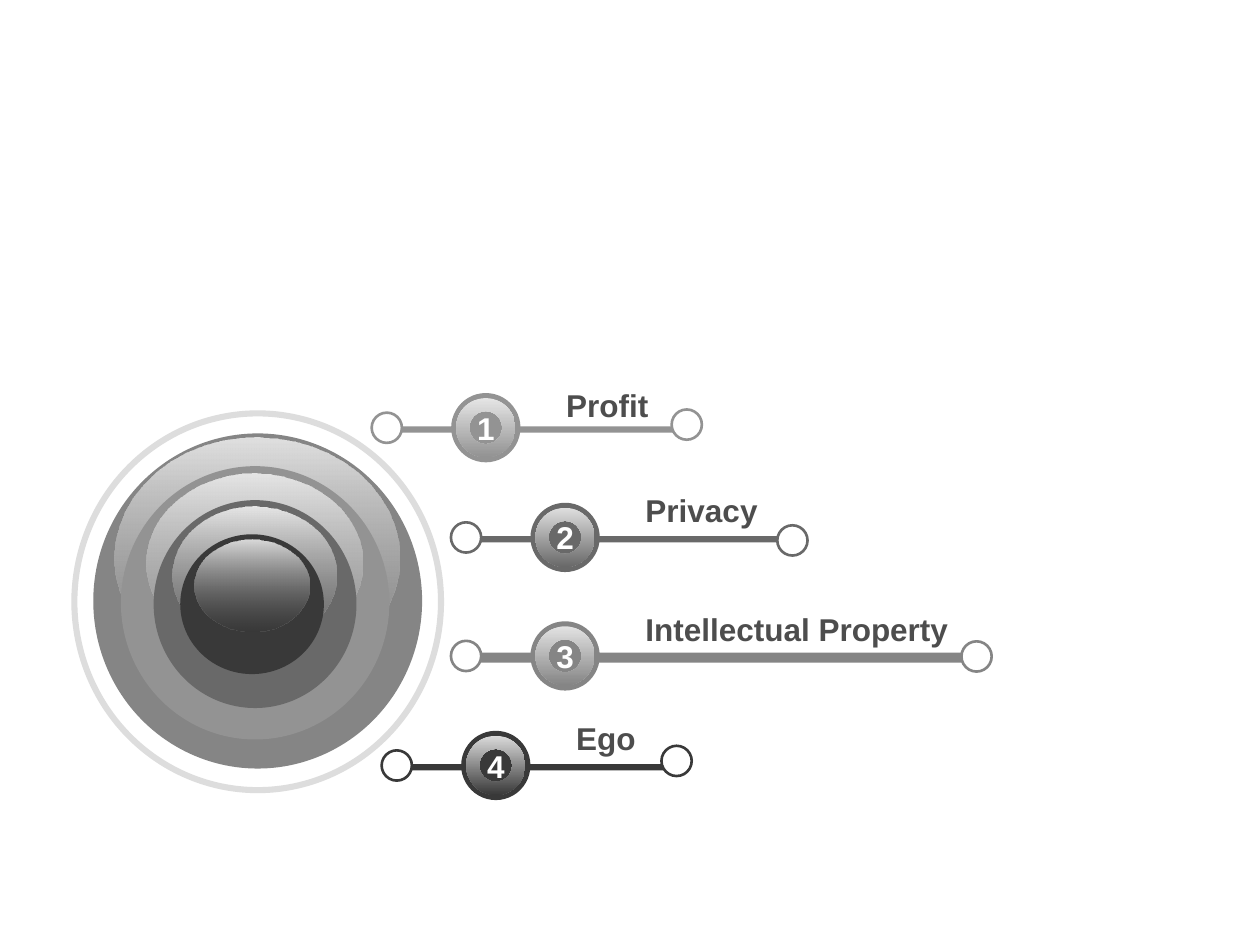
from pptx import Presentation
from pptx.dml.color import RGBColor
from pptx.enum.shapes import MSO_SHAPE
from pptx.enum.text import MSO_ANCHOR, PP_ALIGN
from pptx.oxml.ns import qn
from pptx.util import Pt
from lxml import etree

OVAL, BAR = MSO_SHAPE.OVAL, MSO_SHAPE.RECTANGLE
ROUNDED, DONUT = MSO_SHAPE.ROUNDED_RECTANGLE, MSO_SHAPE.DONUT
LEFT, CENTER, MIDDLE = PP_ALIGN.LEFT, PP_ALIGN.CENTER, MSO_ANCHOR.MIDDLE

WHITE = RGBColor(0xFF, 0xFF, 0xFF)
TEXT = RGBColor(0x4D, 0x4D, 0x4D)
RIM = RGBColor(0xDD, 0xDD, 0xDD)
LIGHT = RGBColor(0x93, 0x93, 0x93)
MEDIUM = RGBColor(0x85, 0x85, 0x85)
DARK = RGBColor(0x69, 0x69, 0x69)
DARKEST = RGBColor(0x39, 0x39, 0x39)
GLOSS_E5 = RGBColor(0xE5, 0xE5, 0xE5)
GLOSS_E6 = RGBColor(0xE6, 0xE6, 0xE6)
GLOSS_E2 = RGBColor(0xE2, 0xE2, 0xE2)
GLOSS_E0 = RGBColor(0xE0, 0xE0, 0xE0)
GLOSS_DE = RGBColor(0xDE, 0xDE, 0xDE)
GLOSS_DA = RGBColor(0xDA, 0xDA, 0xDA)

BADGE, KNOB, GLOSS = 39.6, 17.3, 33.8

# label, colour, gloss, badge left and top, label rise, bar right and height, end knob left and top
ITEMS = [
    ("Profit", LIGHT, GLOSS_E5, 257.8, 224.6, 11.5, 396, 3.6, 383.8, 234),
    ("Privacy", DARK, GLOSS_DE, 303.1, 287.3, 14.4, 455.8, 3.6, 444.2, 300.2),
    ("Intellectual Property", MEDIUM, GLOSS_E2, 303.1, 355, 13.7, 558, 5.8, 549.4, 366.5),
    ("Ego", DARKEST, GLOSS_DA, 263.5, 417.6, 14.4, 390.2, 3.6, 378, 426.2),
]

# colour, gloss, disc box, highlight box
DISCS = [
    (MEDIUM, GLOSS_E0, (53.3, 247.7, 187.9, 191.5), (65.5, 249.8, 162.7, 138.2)),
    (LIGHT, GLOSS_E5, (69.1, 266.4, 153.4, 156.2), (83.5, 270.7, 123.8, 102.2)),
    (DARK, GLOSS_E6, (87.8, 285.8, 115.9, 118.8), (98.6, 289.4, 93.6, 78.5)),
    (DARKEST, GLOSS_DA, (103, 305.3, 82.1, 79.9), (110.9, 308.2, 66.2, 52.6)),
]


def add_form(page, kind, bounds, fill=None, line=None, width=1.5):
    shape = page.shapes.add_shape(kind, *map(Pt, bounds))
    shape.shadow.inherit = False
    if fill is None:
        shape.fill.background()
    else:
        shape.fill.solid()
        shape.fill.fore_color.rgb = fill
    if line is None:
        shape.line.fill.background()
    else:
        shape.line.color.rgb = line
        shape.line.width = Pt(width)
    return shape


def add_gradient(shape, top, bottom, opacity=None):
    shape.fill.gradient()
    shape.fill.gradient_angle = 270
    for stop, colour, position in zip(shape.fill.gradient_stops, (top, bottom), (0, 1)):
        stop.color.rgb = colour
        stop.position = position
    if opacity is not None:
        colours = list(shape._element.spPr.iter(qn("a:srgbClr")))
        etree.SubElement(colours[1], qn("a:alpha")).set("val", str(opacity * 1000))


def add_text(page, bounds, text, colour, align):
    frame = add_form(page, ROUNDED, bounds).text_frame
    frame.word_wrap = True
    frame.vertical_anchor = MIDDLE
    para = frame.paragraphs[0]
    para.alignment = align
    span = para.add_run()
    span.text = text
    for name, value in {"name": "Arial", "size": Pt(18), "bold": True}.items():
        setattr(span.font, name, value)
    span.font.color.rgb = colour


def add_item(page, number, item):
    label, colour, gloss, left, top, rise, bar_right, bar_height, end_left, end_top = item
    add_text(page, (left + 56.9, top - rise, 283.7, 36.7), label, TEXT, LEFT)
    # Bar with a knob at each end
    bar_left = left - 33.9
    add_form(page, BAR, (bar_left, top + 20.8 - bar_height / 2,
                         bar_right - bar_left, bar_height), colour)
    for x, y in ((left - 45.4, top + 11.2), (end_left, end_top)):
        add_form(page, OVAL, (x, y, KNOB, KNOB), WHITE, colour)
    # Numbered badge with a glossy ring
    add_form(page, OVAL, (left, top, BADGE, BADGE), colour)
    inset = (BADGE - GLOSS) / 2
    ring = add_form(page, DONUT, (left + inset, top + inset, GLOSS, GLOSS), colour)
    ring.adjustments[0] = 0.22
    add_gradient(ring, gloss, colour)
    add_text(page, (left, top + 1.1, BADGE, 37.4), str(number), WHITE, CENTER)


def add_target(page):
    add_form(page, OVAL, (42.5, 236.2, 209.5, 215.3), WHITE, RIM, 3.5)
    for colour, gloss, disc, highlight in DISCS:
        add_form(page, OVAL, disc, colour)
        add_gradient(add_form(page, OVAL, highlight, colour), gloss, colour, 37)


def main():
    deck = Presentation()
    deck.slide_width, deck.slide_height = Pt(720), Pt(540)
    page = deck.slides.add_slide(deck.slide_layouts[6])
    for number, item in enumerate(ITEMS, 1):
        add_item(page, number, item)
    add_target(page)
    deck.save("out.pptx")


if __name__ == "__main__":
    main()
